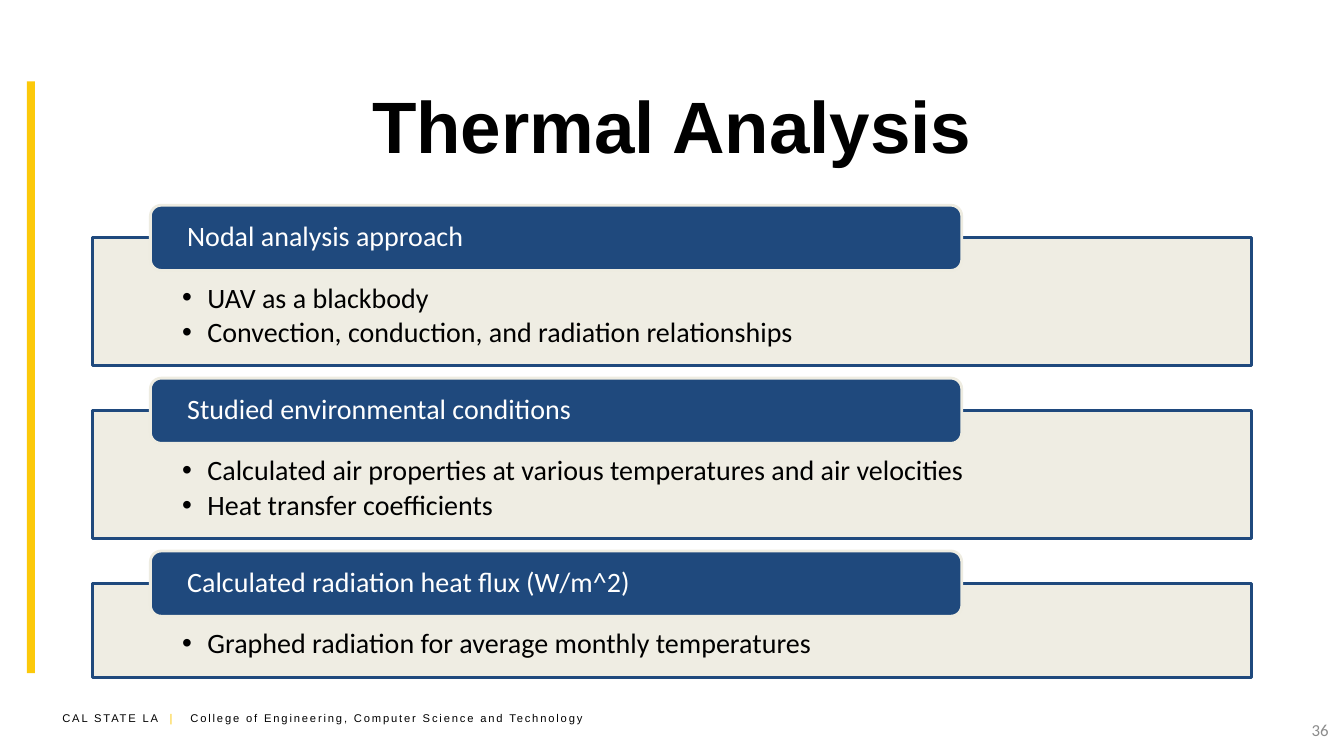
from lxml import etree
from pptx import Presentation
from pptx.dml.color import RGBColor
from pptx.enum.shapes import MSO_SHAPE
from pptx.enum.text import MSO_ANCHOR, PP_ALIGN
from pptx.oxml.ns import qn
from pptx.util import Pt

RECT, ROUNDED = MSO_SHAPE.RECTANGLE, MSO_SHAPE.ROUNDED_RECTANGLE
LEFT, CENTER, RIGHT = PP_ALIGN.LEFT, PP_ALIGN.CENTER, PP_ALIGN.RIGHT
TOP, MIDDLE = MSO_ANCHOR.TOP, MSO_ANCHOR.MIDDLE

BLACK = RGBColor(0x00, 0x00, 0x00)
WHITE = RGBColor(0xFF, 0xFF, 0xFF)
GRAY = RGBColor(0x8C, 0x8C, 0x8C)
GOLD = RGBColor(0xFC, 0xC9, 0x0A)
NAVY = RGBColor(0x1F, 0x49, 0x7D)
CREAM = RGBColor(0xEE, 0xEC, 0xE1)

SECTIONS = [
    ("Nodal analysis approach",
     ["UAV as a blackbody", "Convection, conduction, and radiation relationships"]),
    ("Studied environmental conditions",
     ["Calculated air properties at various temperatures and air velocities",
      "Heat transfer coefficients"]),
    ("Calculated radiation heat flux (W/m^2)",
     ["Graphed radiation for average monthly temperatures"]),
]
FIRST_TOP, STEP = 169.8, 123.5
ONE_LINE_HEIGHT, EXTRA_LINE = 67, 24.5


class Deck:
    heading_font = "Arial"
    body_font = "Calibri"

    def __init__(self):
        self.prs = Presentation()
        self.prs.slide_width, self.prs.slide_height = Pt(960), Pt(540)
        self.s = self.prs.slides.add_slide(self.prs.slide_layouts[5])

    def frame(self, sp, insets, anchor):
        tf = sp.text_frame
        tf.word_wrap = True
        tf.vertical_anchor = anchor
        tf.margin_left, tf.margin_top, tf.margin_right, tf.margin_bottom = map(Pt, insets)
        return tf

    def run(self, p, text, size, color, font, bold=False):
        r = p.add_run()
        r.text = text
        r.font.name, r.font.size, r.font.bold = font, Pt(size), bold
        r.font.color.rgb = color
        return r

    def title(self, text, box):
        sp = self.s.shapes.title
        sp.left, sp.top, sp.width, sp.height = map(Pt, box)
        p = self.frame(sp, (7.2, 3.6, 7.2, 3.6), MIDDLE).paragraphs[0]
        p.alignment = CENTER
        self.run(p, text, 52, BLACK, self.heading_font, True)

    def shape(self, kind, box, fill, line=None, alpha=None):
        sp = self.s.shapes.add_shape(kind, *map(Pt, box))
        sp.shadow.inherit = False
        sp.fill.solid()
        sp.fill.fore_color.rgb = fill
        if alpha:
            color = sp.fill._xPr.find(qn("a:solidFill"))[0]
            etree.SubElement(color, qn("a:alpha"), val=str(alpha * 1000))
        if line is None:
            sp.line.fill.background()
        else:
            sp.line.color.rgb = line
            sp.line.width = Pt(2)
        return sp

    def text(self, box, anchor):
        sp = self.s.shapes.add_textbox(*map(Pt, box))
        return self.frame(sp, (7.2, 3.6, 7.2, 3.6), anchor).paragraphs[0]

    def bullet(self, p):
        pPr = p._p.get_or_add_pPr()
        pPr.set("marL", str(Pt(18)))
        pPr.set("indent", str(-Pt(18)))
        etree.SubElement(pPr, qn("a:buFont"), typeface="Arial")
        etree.SubElement(pPr, qn("a:buChar"), char="•")

    def section(self, top, heading, items):
        height = ONE_LINE_HEIGHT + EXTRA_LINE * (len(items) - 1)
        panel = self.shape(RECT, (66, top, 828, height), CREAM, NAVY, 90)
        tf = self.frame(panel, (64.2, 33, 64.2, 11.5), TOP)
        for i, item in enumerate(items):
            p = tf.paragraphs[0] if i == 0 else tf.add_paragraph()
            self.bullet(p)
            p.level = 1
            p.alignment = LEFT
            p.line_spacing = 0.9
            p.space_after = Pt(3)
            self.run(p, item, 20, BLACK, self.body_font)
        tab = self.shape(ROUNDED, (107.4, top - 23.2, 579.6, 46.6), NAVY, CREAM)
        p = self.frame(tab, (24, 0, 24, 0), MIDDLE).paragraphs[0]
        p.alignment = LEFT
        p.line_spacing = 0.9
        self.run(p, heading, 20, WHITE, self.body_font)

    def footer(self, box, parts):
        p = self.text(box, TOP)
        tabs = etree.SubElement(p._p.get_or_add_pPr(), qn("a:tabLst"))
        etree.SubElement(tabs, qn("a:tab"), pos=str(Pt(91.5)), algn="l")
        for text, color in parts:
            r = self.run(p, text, 8, color, self.heading_font)
            r._r.get_or_add_rPr().set("spc", "130")

    def page_number(self, text, box):
        p = self.text(box, MIDDLE)
        p.alignment = RIGHT
        self.run(p, text, 12, GRAY, self.body_font)


def main():
    deck = Deck()
    deck.footer((37.4, 504.7, 398, 17.3), [
        ("CAL STATE LA ", BLACK),
        (" |\t", GOLD),
        ("College of Engineering, Computer Science and Technology", BLACK),
    ])
    deck.shape(RECT, (19.2, 58.2, 5.8, 422.6), GOLD)
    deck.title("Thermal Analysis", (66, 44, 828, 89.3))
    for i, (heading, items) in enumerate(SECTIONS):
        deck.section(FIRST_TOP + i * STEP, heading, items)
    deck.page_number("36", (732.2, 507, 224, 28.8))
    deck.prs.save("out.pptx")


if __name__ == "__main__":
    main()
